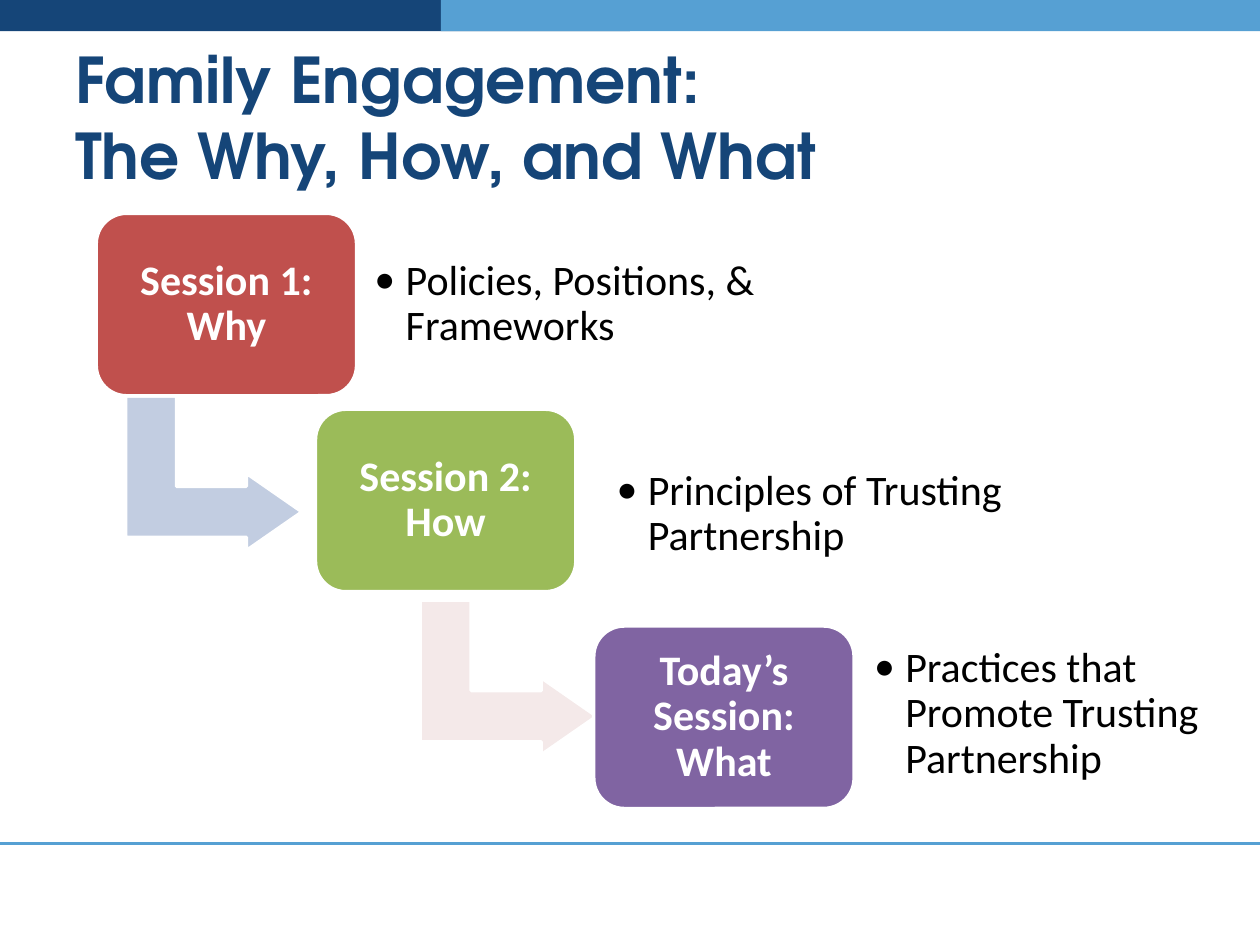
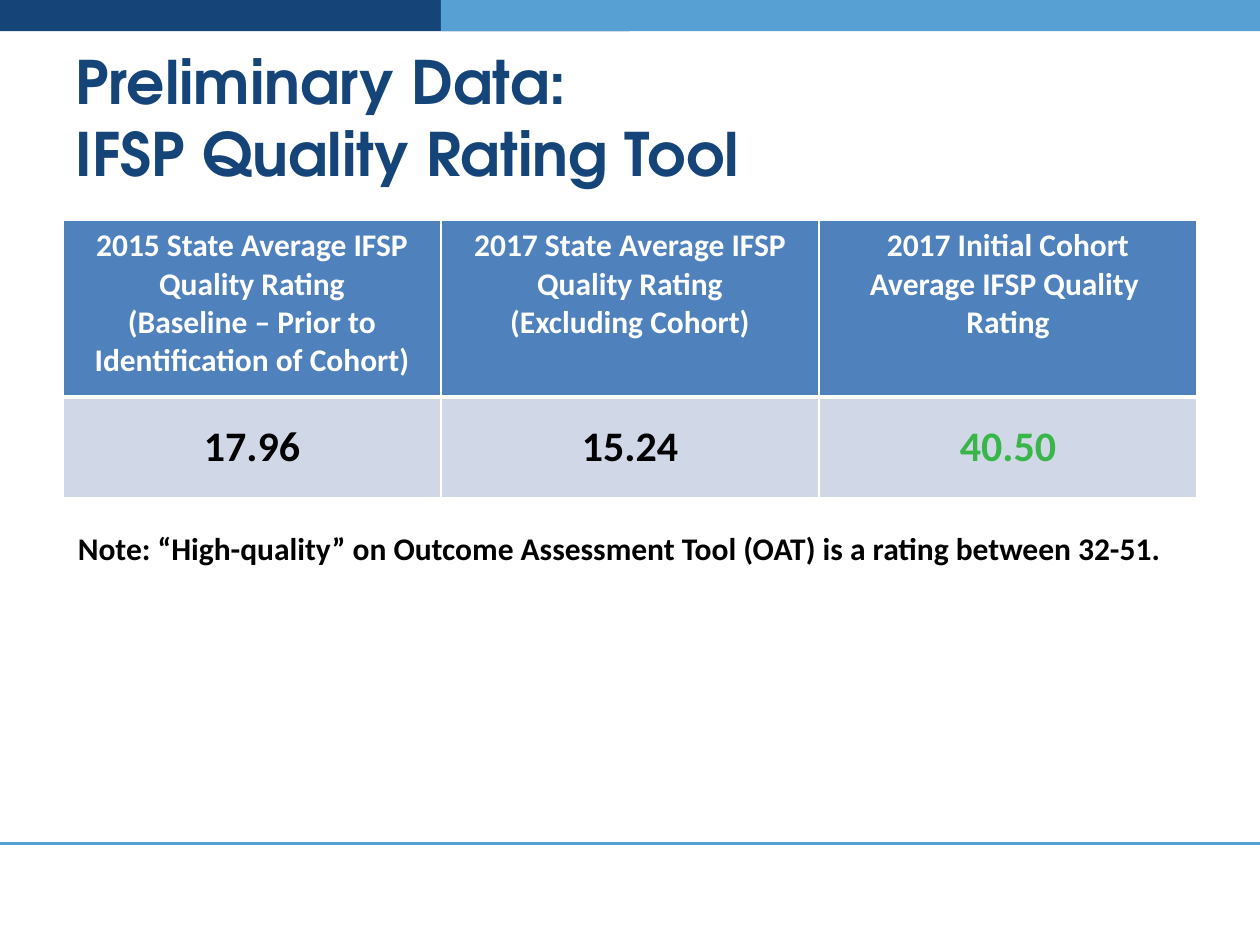
from dataclasses import dataclass
from typing import Optional

from lxml.etree import SubElement
from pptx import Presentation
from pptx.dml.color import RGBColor
from pptx.enum.shapes import MSO_CONNECTOR, MSO_SHAPE
from pptx.enum.text import MSO_ANCHOR, PP_ALIGN
from pptx.oxml import parse_xml
from pptx.oxml.ns import nsdecls, qn
from pptx.util import Cm, Pt

NAVY = "154578"
SKY = "56A0D3"
WHITE = "FFFFFF"
BLACK = "000000"
HEADER_BLUE = "4F81BD"
CELL_BLUE = "D0D8E8"
GREEN = "39B54A"
BODY_FONT = "Calibri"
TITLE_FONT = "TeX Gyre Adventor"
SLIDE_WIDTH, SLIDE_HEIGHT = 25.4, 19.05
BAND_TOP, BAND_HEIGHT = -3.18, 3.81
FOOTER_TOP = 17
MARGIN = 1.27
BOX_WIDTH, BOX_HEIGHT = 5.25, 3.68
ARROW_WIDTH, ARROW_HEIGHT = 3.12, 3.56
TOPIC_HEIGHT = 2.97
COLUMN_WIDTH = 7.62
HEADER_HEIGHT, VALUE_HEIGHT = 3.56, 2.03


@dataclass(frozen=True)
class TextStyle:
    """Font settings of a run."""

    size: float
    color: str
    bold: bool = True
    font: str = BODY_FONT


@dataclass(frozen=True)
class Band:
    """Coloured band that bleeds over the top edge."""

    left: float
    width: float
    color: str


@dataclass(frozen=True)
class Arrow:
    """Bent arrow that leads to the next session."""

    left: float
    top: float
    color: str


@dataclass(frozen=True)
class Session:
    """One step of the staircase with its topic."""

    name: str
    left: float
    top: float
    color: str
    topic: str
    topic_left: float
    topic_top: float
    topic_width: float
    arrow: Optional[Arrow] = None


@dataclass(frozen=True)
class Rating:
    """One column of the rating table."""

    heading: tuple[str, ...]
    value: str
    color: str = BLACK


BANDS = (Band(0, 12.7, NAVY), Band(8.89, 16.51, SKY))
SESSIONS = (
    Session("Session 1: Why", 1.94, 4.3, "C0504D", "Policies, Positions, & Frameworks",
            7.3, 4.65, 10.41, Arrow(2.75, 7.76, "C2CDE1")),
    Session("Session 2: How", 6.36, 8.25, "9BBB59", "Principles of Trusting Partnership",
            12.18, 8.89, 11.38, Arrow(8.69, 11.88, "F4E9E9")),
    Session("Today’s Session: What", 11.97, 12.62, "8064A2",
            "Practices that Promote Trusting Partnership", 17.37, 12.91, 7.16),
)
RATINGS = (
    Rating(("2015 State Average IFSP", "Quality Rating", "(Baseline – Prior to",
            "Identification of Cohort)"), "17.96"),
    Rating(("2017 State Average IFSP", "Quality Rating", "(Excluding Cohort)"), "15.24"),
    Rating(("2017 Initial Cohort", "Average IFSP Quality ", "Rating"), "40.50", GREEN),
)


def rgb(color: str) -> RGBColor:
    """Turn a hex string into a colour."""
    return RGBColor.from_string(color)


def add_run(paragraph, text: str, style: TextStyle) -> None:
    """Append a styled run to a paragraph."""
    run = paragraph.add_run()
    run.text = text
    run.font.name = style.font
    run.font.size = Pt(style.size)
    run.font.bold = style.bold
    run.font.color.rgb = rgb(style.color)


def add_preset(slide, preset, left: float, top: float, width: float, height: float,
               fill: str, outline: Optional[str] = None):
    """Draw a filled preset shape without shadow."""
    shape = slide.shapes.add_shape(preset, Cm(left), Cm(top), Cm(width), Cm(height))
    shape.shadow.inherit = False
    shape.fill.solid()
    shape.fill.fore_color.rgb = rgb(fill)
    if outline:
        shape.line.color.rgb = rgb(outline)
        shape.line.width = Pt(2)
    else:
        shape.line.fill.background()
    return shape


def add_text_frame(slide, left: float, top: float, width: float, height: float, anchor):
    """Add a wrapping text box and return its frame."""
    frame = slide.shapes.add_textbox(Cm(left), Cm(top), Cm(width), Cm(height)).text_frame
    frame.word_wrap = True
    frame.vertical_anchor = anchor
    return frame


def set_margins(frame, margin: float) -> None:
    """Give a text frame the same margin on all sides."""
    frame.margin_left = frame.margin_right = Cm(margin)
    frame.margin_top = frame.margin_bottom = Cm(margin)


def add_bullet(paragraph) -> None:
    """Set a hanging bullet on a paragraph."""
    properties = paragraph._p.get_or_add_pPr()
    properties.set("marL", str(Cm(0.63)))
    properties.set("indent", str(Cm(-0.63)))
    SubElement(properties, qn("a:buFont")).set("typeface", BODY_FONT)
    SubElement(properties, qn("a:buChar")).set("char", "•")


def add_framed_slide(presentation, title_lines: tuple[str, ...], title_size: float):
    """Add a slide with footer line, top bands and title."""
    slide = presentation.slides.add_slide(presentation.slide_layouts[6])
    line = slide.shapes.add_connector(
        MSO_CONNECTOR.STRAIGHT, Cm(0), Cm(FOOTER_TOP), Cm(SLIDE_WIDTH), Cm(FOOTER_TOP))
    line.line.color.rgb = rgb(SKY)
    line.line.width = Pt(1.5)
    SubElement(line._element.spPr, qn("a:effectLst"))
    for band in BANDS:
        add_preset(slide, MSO_SHAPE.RECTANGLE, band.left, BAND_TOP, band.width,
                   BAND_HEIGHT, band.color)
    frame = add_text_frame(slide, MARGIN, 0.76, 22.86, 3.18, MSO_ANCHOR.MIDDLE)
    paragraph = frame.paragraphs[0]
    for index, text in enumerate(title_lines):
        if index:
            paragraph.add_line_break()
        add_run(paragraph, text, TextStyle(title_size, NAVY, font=TITLE_FONT))
    return slide


def add_session(slide, session: Session) -> None:
    """Draw a session box, its arrow and its topic."""
    if session.arrow:
        arrow = add_preset(slide, MSO_SHAPE.BENT_UP_ARROW, session.arrow.left,
                           session.arrow.top, ARROW_WIDTH, ARROW_HEIGHT,
                           session.arrow.color, WHITE)
        arrow.rotation = 90
        for index, value in enumerate((0.33, 0.25, 0.36)):
            arrow.adjustments[index] = value
    box = add_preset(slide, MSO_SHAPE.ROUNDED_RECTANGLE, session.left, session.top,
                     BOX_WIDTH, BOX_HEIGHT, session.color, WHITE)
    box.text_frame.word_wrap = True
    box.text_frame.vertical_anchor = MSO_ANCHOR.MIDDLE
    topic = add_text_frame(slide, session.topic_left, session.topic_top,
                           session.topic_width, TOPIC_HEIGHT, MSO_ANCHOR.MIDDLE)
    for frame, text, style, alignment in (
        (box.text_frame, session.name, TextStyle(24, WHITE), PP_ALIGN.CENTER),
        (topic, session.topic, TextStyle(24, BLACK, False), PP_ALIGN.LEFT),
    ):
        set_margins(frame, 0.25)
        paragraph = frame.paragraphs[0]
        paragraph.alignment = alignment
        paragraph.line_spacing = 0.9
        add_run(paragraph, text, style)
    add_bullet(topic.paragraphs[0])


def set_borders(cell, bottom: float) -> None:
    """Give a cell thin white borders and a chosen bottom border."""
    properties = cell._tc.get_or_add_tcPr()
    sides = (("lnL", 1), ("lnR", 1), ("lnT", 1), ("lnB", bottom))
    for index, (side, width) in enumerate(sides):
        properties.insert(index, parse_xml(
            f'<a:{side} {nsdecls("a")} w="{Pt(width)}"><a:solidFill>'
            f'<a:srgbClr val="{WHITE}"/></a:solidFill></a:{side}>'))


def fill_cell(cell, lines: tuple[str, ...], style: TextStyle, fill: str) -> None:
    """Write centred lines into a filled cell."""
    cell.fill.solid()
    cell.fill.fore_color.rgb = rgb(fill)
    frame = cell.text_frame
    for index, text in enumerate(lines):
        paragraph = frame.add_paragraph() if index else frame.paragraphs[0]
        paragraph.alignment = PP_ALIGN.CENTER
        add_run(paragraph, text, style)


def add_rating_table(slide) -> None:
    """Draw the table of average ratings."""
    table = slide.shapes.add_table(
        2, len(RATINGS), Cm(MARGIN), Cm(4.44), Cm(COLUMN_WIDTH * len(RATINGS)),
        Cm(HEADER_HEIGHT + VALUE_HEIGHT)).table
    table.horz_banding = False
    table.rows[0].height = Cm(HEADER_HEIGHT)
    table.rows[1].height = Cm(VALUE_HEIGHT)
    for index, rating in enumerate(RATINGS):
        table.columns[index].width = Cm(COLUMN_WIDTH)
        heading, value = table.cell(0, index), table.cell(1, index)
        fill_cell(heading, rating.heading, TextStyle(18, WHITE), HEADER_BLUE)
        fill_cell(value, (rating.value,), TextStyle(24, rating.color), CELL_BLUE)
        value.vertical_anchor = MSO_ANCHOR.MIDDLE
        set_borders(heading, 3)
        set_borders(value, 1)


def build_sessions_slide(presentation) -> None:
    """Build the slide with the three sessions."""
    slide = add_framed_slide(
        presentation, ("Family Engagement:", "The Why, How, and What"), 36)
    for session in SESSIONS:
        add_session(slide, session)


def build_ratings_slide(presentation) -> None:
    """Build the slide with the rating table and its note."""
    slide = add_framed_slide(
        presentation, ("Preliminary Data:", "IFSP Quality Rating Tool"), 34.2)
    add_rating_table(slide)
    note = add_text_frame(slide, 1.32, 10.54, 22.43, 2.57, MSO_ANCHOR.TOP)
    add_run(note.paragraphs[0],
            "Note: “High-quality” on Outcome Assessment Tool (OAT) is a rating between 32-51.",
            TextStyle(18, BLACK))


def main() -> None:
    """Build and save the presentation."""
    presentation = Presentation()
    presentation.slide_width = Cm(SLIDE_WIDTH)
    presentation.slide_height = Cm(SLIDE_HEIGHT)
    build_sessions_slide(presentation)
    build_ratings_slide(presentation)
    presentation.save("out.pptx")


if __name__ == "__main__":
    main()
